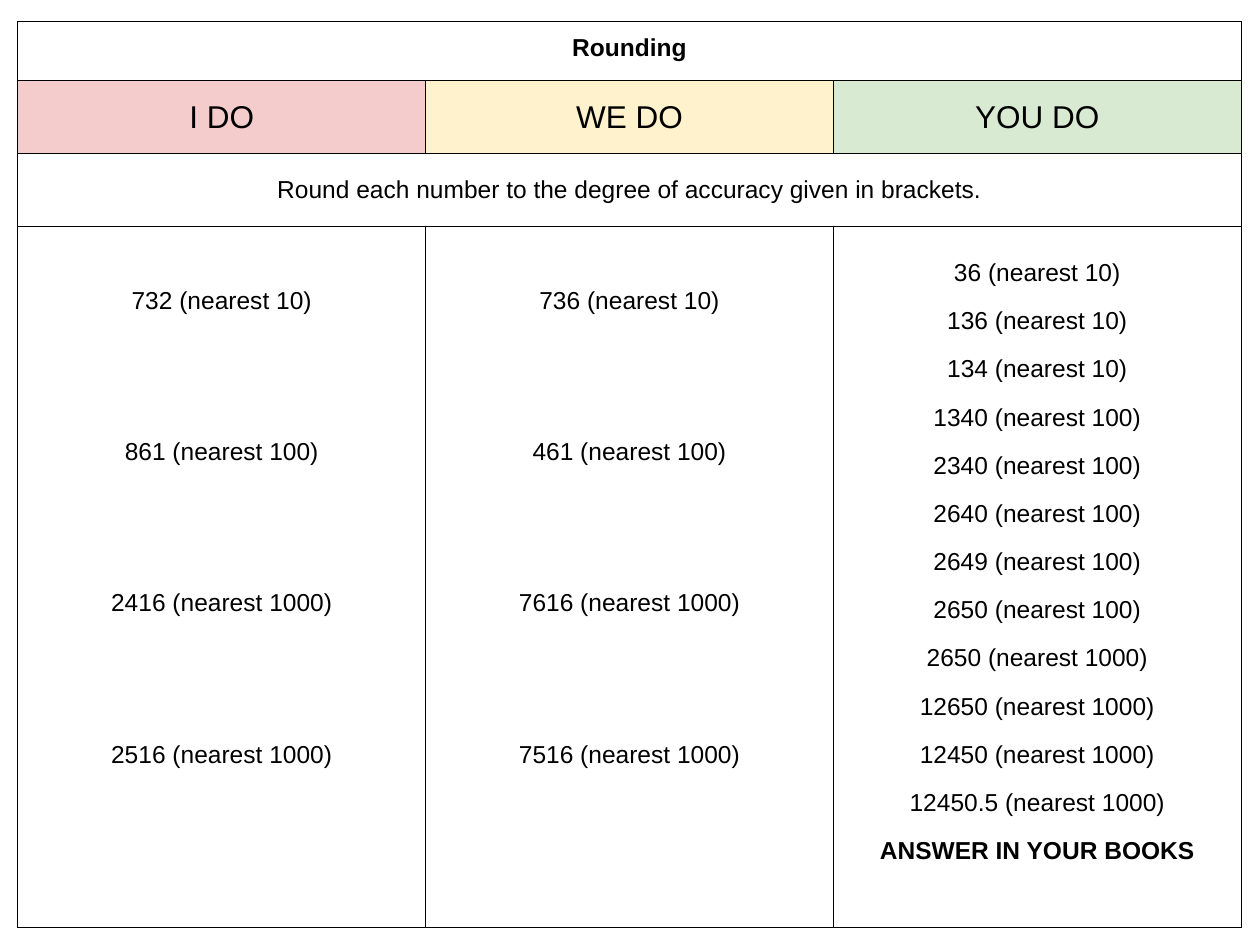
from dataclasses import dataclass

from lxml import etree
from pptx import Presentation
from pptx import util as u
from pptx.dml.color import RGBColor
from pptx.enum import text
from pptx.oxml.ns import qn
from pptx.table import Table, _Cell

BLACK = RGBColor(0x00, 0x00, 0x00)
PINK = RGBColor(0xF4, 0xCC, 0xCC)
CREAM = RGBColor(0xFF, 0xF2, 0xCC)
GREEN = RGBColor(0xD9, 0xEA, 0xD3)

TOP, MIDDLE = text.MSO_ANCHOR.TOP, text.MSO_ANCHOR.MIDDLE
COL_WIDTH = u.Cm(8.22)
ROW_HEIGHTS = [u.Cm(h) for h in (1.2, 1.46, 1.47, 14.14)]
MARGIN = u.Cm(0.25)
BORDER = u.Pt(0.75)


@dataclass
class Column:
    heading: str
    fill: RGBColor
    questions: list[str]
    line_spacing: float
    gap: float = 0  # points after each question
    closing: str = ""


COLUMNS = [
    Column("I DO", PINK,
           ["732 (nearest 10)", "861 (nearest 100)",
            "2416 (nearest 1000)", "2516 (nearest 1000)"], 2.75, 43.25),
    Column("WE DO", CREAM,
           ["736 (nearest 10)", "461 (nearest 100)",
            "7616 (nearest 1000)", "7516 (nearest 1000)"], 2.75, 43.25),
    Column("YOU DO", GREEN,
           ["36 (nearest 10)", "136 (nearest 10)", "134 (nearest 10)",
            "1340 (nearest 100)", "2340 (nearest 100)", "2640 (nearest 100)",
            "2649 (nearest 100)", "2650 (nearest 100)", "2650 (nearest 1000)",
            "12650 (nearest 1000)", "12450 (nearest 1000)",
            "12450.5 (nearest 1000)"], 1.75, closing="ANSWER IN YOUR BOOKS"),
]


def add_borders(cell: _Cell) -> None:
    tcPr = cell._tc.get_or_add_tcPr()
    for side in ("a:lnL", "a:lnR", "a:lnT", "a:lnB"):
        ln = etree.SubElement(tcPr, qn(side), w=str(int(BORDER)))
        fill = etree.SubElement(ln, qn("a:solidFill"))
        etree.SubElement(fill, qn("a:srgbClr"), val=str(BLACK))


def write_cell(cell: _Cell, lines: list[str], size: float = 14,
               bold: bool = False, anchor: text.MSO_ANCHOR = TOP) -> None:
    cell.margin_left = cell.margin_right = MARGIN
    cell.margin_top = cell.margin_bottom = MARGIN
    cell.vertical_anchor = anchor
    tf = cell.text_frame
    tf.text = "\n".join(lines)
    for p in tf.paragraphs:
        p.alignment = text.PP_ALIGN.CENTER
        p.font.name = "Arial"
        p.font.size = u.Pt(size)
        p.font.bold = bold
        p.font.color.rgb = BLACK


def write_column(table: Table, index: int, column: Column) -> None:
    heading, body = table.cell(1, index), table.cell(3, index)
    write_cell(heading, [column.heading], 18, anchor=MIDDLE)
    heading.fill.solid()
    heading.fill.fore_color.rgb = column.fill

    closing = [column.closing] if column.closing else []
    write_cell(body, column.questions + closing)
    paragraphs = body.text_frame.paragraphs
    for p in paragraphs:
        p.line_spacing = column.line_spacing
        p.space_after = u.Pt(column.gap)
    paragraphs[-1].font.bold = bool(closing)


def main() -> None:
    prs = Presentation()
    prs.slide_width, prs.slide_height = u.Cm(25.4), u.Cm(19.05)
    s = prs.slides.add_slide(prs.slide_layouts[6])

    table = s.shapes.add_table(
        len(ROW_HEIGHTS), len(COLUMNS), u.Cm(0.36), u.Cm(0.43),
        COL_WIDTH * len(COLUMNS), sum(ROW_HEIGHTS)).table
    table.first_row = table.horz_banding = False
    for row, height in zip(table.rows, ROW_HEIGHTS):
        row.height = height
    for cell in table.iter_cells():
        add_borders(cell)
        cell.fill.background()

    for row in (0, 2):
        table.cell(row, 0).merge(table.cell(row, len(COLUMNS) - 1))
    write_cell(table.cell(0, 0), ["Rounding"], bold=True)
    write_cell(
        table.cell(2, 0),
        ["Round each number to the degree of accuracy given in brackets."],
        anchor=MIDDLE)
    for index, column in enumerate(COLUMNS):
        write_column(table, index, column)

    prs.save("out.pptx")


if __name__ == "__main__":
    main()
